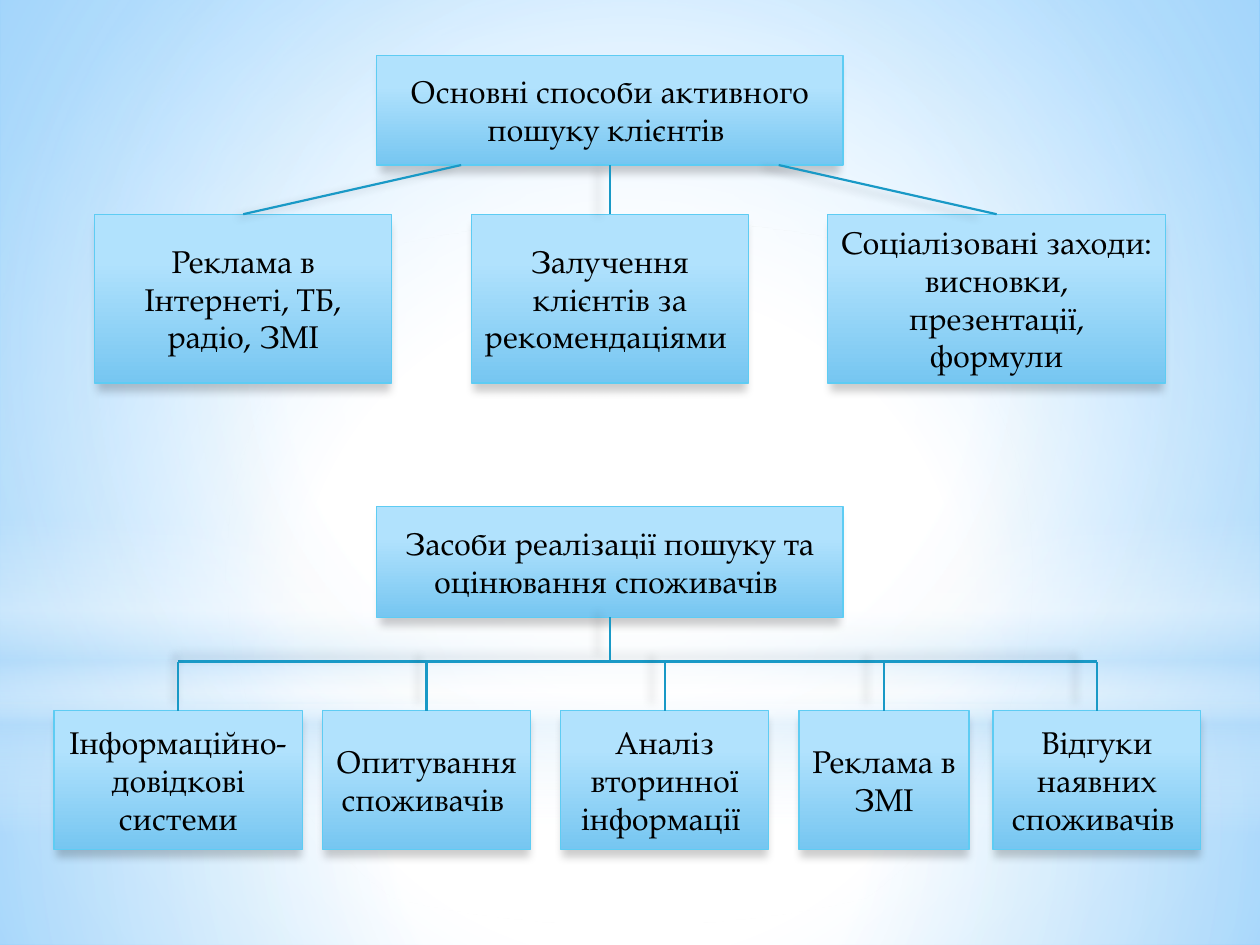
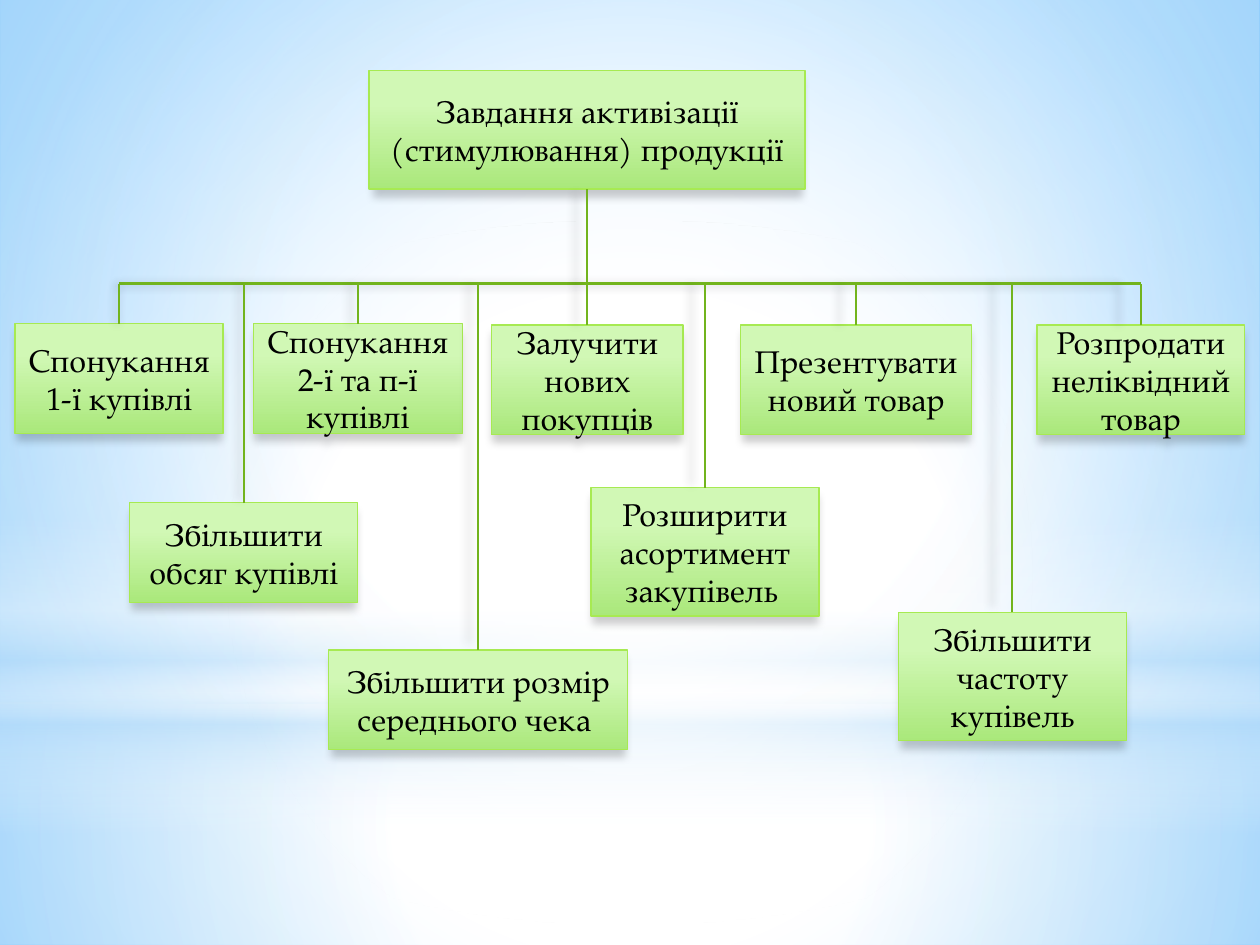
from collections import namedtuple

from lxml import etree
from pptx import Presentation
from pptx.dml.color import RGBColor
from pptx.enum.shapes import MSO_CONNECTOR, MSO_SHAPE
from pptx.enum.text import MSO_ANCHOR, PP_ALIGN
from pptx.oxml.ns import qn
from pptx.util import Inches, Pt

RECTANGLE, ELLIPSE = MSO_SHAPE.RECTANGLE, MSO_SHAPE.OVAL
STRAIGHT = MSO_CONNECTOR.STRAIGHT
CENTER, MIDDLE = PP_ALIGN.CENTER, MSO_ANCHOR.MIDDLE
TOP_SIDE, BOTTOM_SIDE = 0, 2

SLIDE_W, SLIDE_H = Inches(10), Inches(7.5)
COLUMN, ROW = SLIDE_W / 100, SLIDE_H / 75
FONT, FONT_SIZE = "TeX Gyre Pagella", Pt(18)

BLACK = RGBColor(0x00, 0x00, 0x00)
WHITE = RGBColor(0xFF, 0xFF, 0xFF)
SKY = RGBColor(0x63, 0xBC, 0xFF)
HAZE = RGBColor(0xB4, 0xDC, 0xFA)

Palette = namedtuple("Palette", "light deep border branch")
BLUE = Palette(RGBColor(0xB1, 0xE2, 0xFD), RGBColor(0x76, 0xC6, 0xF1),
               RGBColor(0x5E, 0xCC, 0xF3), RGBColor(0x19, 0x99, 0xC6))
GREEN = Palette(RGBColor(0xD1, 0xF8, 0xB5), RGBColor(0xAA, 0xE8, 0x7B),
                RGBColor(0xA7, 0xEA, 0x52), RGBColor(0x72, 0xB4, 0x1D))

Box = namedtuple("Box", "left top width height")
Node = namedtuple("Node", "text box")

CENTERED = (50, 50, 50, 50)
BACKDROP = [
    (RECTANGLE, Box(0, 55.8, 100, 19.2), CENTERED,
     [(0, WHITE, 91), (37, WHITE, 76), (100, HAZE, 79)]),
    (RECTANGLE, Box(0, 0, 100, 55.8), CENTERED,
     [(0, WHITE, 89), (48, WHITE, 62), (100, HAZE, 79)]),
    (RECTANGLE, Box(0, 41.2, 100, 25), None,
     [(0, WHITE, 0), (29, WHITE, 30), (45, HAZE, 40),
      (55, WHITE, 26), (65, HAZE, 60), (100, WHITE, 0)]),
    (ELLIPSE, Box(0, 17.5, 100, 55.8), CENTERED,
     [(0, WHITE, 100), (56, WHITE, 0)]),
]

SEARCH_ROOT = Node("Основні способи активного пошуку клієнтів ", Box(22.4, 0, 37, 8.7))
SEARCH_WAYS = [
    ("Реклама в Інтернеті, ТБ, радіо, ЗМІ", 23.6),
    ("Залучення клієнтів за рекомендаціями ", 22),
    ("Соціалізовані заходи: висновки, презентації, формули", 26.8),
]
MEANS_ROOT = Node("Засоби реалізації пошуку та оцінювання споживачів ",
                  Box(25.6, 0, 37, 8.8))
MEANS = [Node(text, Box(left, 16.2, width, 11)) for text, left, width in (
    ("Інформаційно-довідкові системи", 0, 19.7),
    ("Опитування споживачів ", 21.3, 16.5),
    ("Аналіз вторинної інформації ", 40.2, 16.5),
    ("Реклама в ЗМІ", 59.1, 13.5),
    ("Відгуки наявних споживачів ", 74.5, 16.5),
)]
TASKS_ROOT = Node("Завдання активізації (стимулювання) продукції",
                  Box(28.1, 0, 34.6, 9.4))
TASKS = [
    Node("Спонукання 1-ї купівлі", Box(0, 20.1, 16.5, 8.7)),
    Node("Збільшити обсяг купівлі", Box(9.1, 34.3, 18.1, 7.9)),
    Node("Спонукання 2-ї та п-ї купівлі", Box(18.9, 20.1, 16.6, 8.7)),
    Node("Збільшити розмір середнього чека ", Box(24.9, 46, 23.7, 7.9)),
    Node("Залучити нових покупців", Box(37.8, 20.2, 15.2, 8.7)),
    Node("Розширити асортимент закупівель ", Box(45.7, 33.1, 18.1, 10.2)),
    Node("Презентувати новий товар", Box(57.6, 20.2, 18.3, 8.7)),
    Node("Збільшити частоту купівель", Box(70.1, 43, 18.1, 10.2)),
    Node("Розпродати неліквідний товар", Box(81.1, 20.2, 16.5, 8.7)),
]


def add_color(parent, color, alpha):
    """Append a colour with the given opacity in percent."""
    color_xml = etree.SubElement(parent, qn("a:srgbClr"), val=str(color))
    if alpha < 100:
        etree.SubElement(color_xml, qn("a:alpha"), val=str(alpha * 1000))


def paint_gradient(fill, owner, stops, focus=None):
    """Give the owner a circular gradient around focus, or a downward one."""
    fill.background()
    gradient = etree.Element(qn("a:gradFill"), rotWithShape="1")
    stop_list = etree.SubElement(gradient, qn("a:gsLst"))
    for position, color, alpha in stops:
        stop = etree.SubElement(stop_list, qn("a:gs"), pos=str(position * 1000))
        add_color(stop, color, alpha)
    if focus:
        path = etree.SubElement(gradient, qn("a:path"), path="circle")
        edges = {side: str(share * 1000) for side, share in zip("ltrb", focus)}
        etree.SubElement(path, qn("a:fillToRect"), **edges)
    else:
        etree.SubElement(gradient, qn("a:lin"), ang="5400000", scaled="0")
    no_fill = owner.find(".//" + qn("a:noFill"))
    no_fill.getparent().replace(no_fill, gradient)


def add_shadow(properties):
    """Put a soft shadow below a shape or a connector."""
    effects = properties.find(qn("a:effectLst"))
    if effects is None:
        effects = etree.SubElement(properties, qn("a:effectLst"))
    shadow = etree.SubElement(
        effects, qn("a:outerShdw"), blurRad=str(Pt(5)), dist=str(Pt(4)),
        dir="5400000", sx="98000", sy="98000", rotWithShape="0")
    add_color(shadow, BLACK, 20)


def place(slide, preset, box):
    """Add a preset shape at a box given in grid units."""
    shape = slide.shapes.add_shape(
        preset, round(box.left * COLUMN), round(box.top * ROW),
        round(box.width * COLUMN), round(box.height * ROW))
    shape.shadow.inherit = False
    return shape


def build_backdrop(master, slide):
    """Set the sky background and its hazy bands on the slide master."""
    paint_gradient(master.background.fill, master.element,
                   [(0, WHITE, 100), (42, WHITE, 100), (100, SKY, 100)],
                   (24, 44, 24, 12))
    for number, (preset, box, focus, stops) in enumerate(BACKDROP, 101):
        band = place(slide, preset, box)
        paint_gradient(band.fill, band.element.spPr, stops, focus)
        band.line.fill.background()
        band.element.nvSpPr.cNvPr.set("id", str(number))
        master.element.cSld.spTree.append(band.element)


def add_node(slide, region, node, palette):
    """Add a captioned box positioned from the corner of its region."""
    card = place(slide, RECTANGLE, node.box._replace(
        left=region.left + node.box.left, top=region.top + node.box.top))
    paint_gradient(card.fill, card.element.spPr,
                   [(28, palette.light, 100), (100, palette.deep, 100)])
    card.line.color.rgb = palette.border
    card.line.width = Pt(0.75)
    add_shadow(card.element.spPr)
    frame = card.text_frame
    frame.word_wrap = True
    frame.vertical_anchor = MIDDLE
    paragraph = frame.paragraphs[0]
    paragraph.alignment = CENTER
    run = paragraph.add_run()
    run.text = node.text
    run.font.name = FONT
    run.font.size = FONT_SIZE
    run.font.color.rgb = BLACK
    return card


def add_branch(slide, start, end, palette):
    """Draw a straight branch between two points."""
    branch = slide.shapes.add_connector(
        STRAIGHT, *(round(value) for value in (*start, *end)))
    branch.line.color.rgb = palette.branch
    branch.line.width = Pt(1.25)
    add_shadow(branch.element.spPr)
    return branch


def middle(card):
    """Return the horizontal middle of a card."""
    return card.left + card.width / 2


def build_fan(slide, region, root, ways, palette):
    """Place evenly spaced boxes under a root, each joined straight to it."""
    root_card = add_node(slide, region, root, palette)
    gap = (region.width - sum(width for _, width in ways)) / (len(ways) - 1)
    top, height = 12.6, 13.4
    left = 0
    root_bottom = root_card.top + root_card.height
    for (text, width), offset in zip(ways, (-11.8, 0, 13.4)):
        way = add_node(slide, region, Node(text, Box(left, top, width, height)), palette)
        branch = add_branch(slide, (middle(way), way.top),
                            (middle(root_card) + offset * COLUMN, root_bottom), palette)
        branch.begin_connect(way, TOP_SIDE)
        if offset == 0:
            branch.end_connect(root_card, BOTTOM_SIDE)
        left += width + gap


def build_tree(slide, region, root, leaves, rail_row, palette):
    """Hang boxes from a horizontal rail below the root."""
    root_card = add_node(slide, region, root, palette)
    cards = [add_node(slide, region, leaf, palette) for leaf in leaves]
    rail = (region.top + rail_row) * ROW
    add_branch(slide, (middle(cards[0]), rail), (middle(cards[-1]), rail), palette)
    for card, side, edge in [
            (root_card, BOTTOM_SIDE, root_card.top + root_card.height),
            *((card, TOP_SIDE, card.top) for card in cards)]:
        drop = add_branch(slide, (middle(card), edge), (middle(card), rail), palette)
        drop.begin_connect(card, side)


def main():
    """Build both slides and save the presentation."""
    deck = Presentation()
    deck.slide_width, deck.slide_height = SLIDE_W, SLIDE_H
    blank = deck.slide_layouts[6]
    search_slide, tasks_slide = (deck.slides.add_slide(blank) for _ in range(2))
    build_backdrop(deck.slide_master, search_slide)
    build_fan(search_slide, Box(7.5, 4.4, 85, 26), SEARCH_ROOT, SEARCH_WAYS, BLUE)
    build_tree(search_slide, Box(4.3, 40.2, 91, 27.2), MEANS_ROOT, MEANS, 12.3, BLUE)
    build_tree(tasks_slide, Box(1.2, 5.6, 97.6, 53.9), TASKS_ROOT, TASKS, 16.9, GREEN)
    deck.save("out.pptx")


if __name__ == "__main__":
    main()
